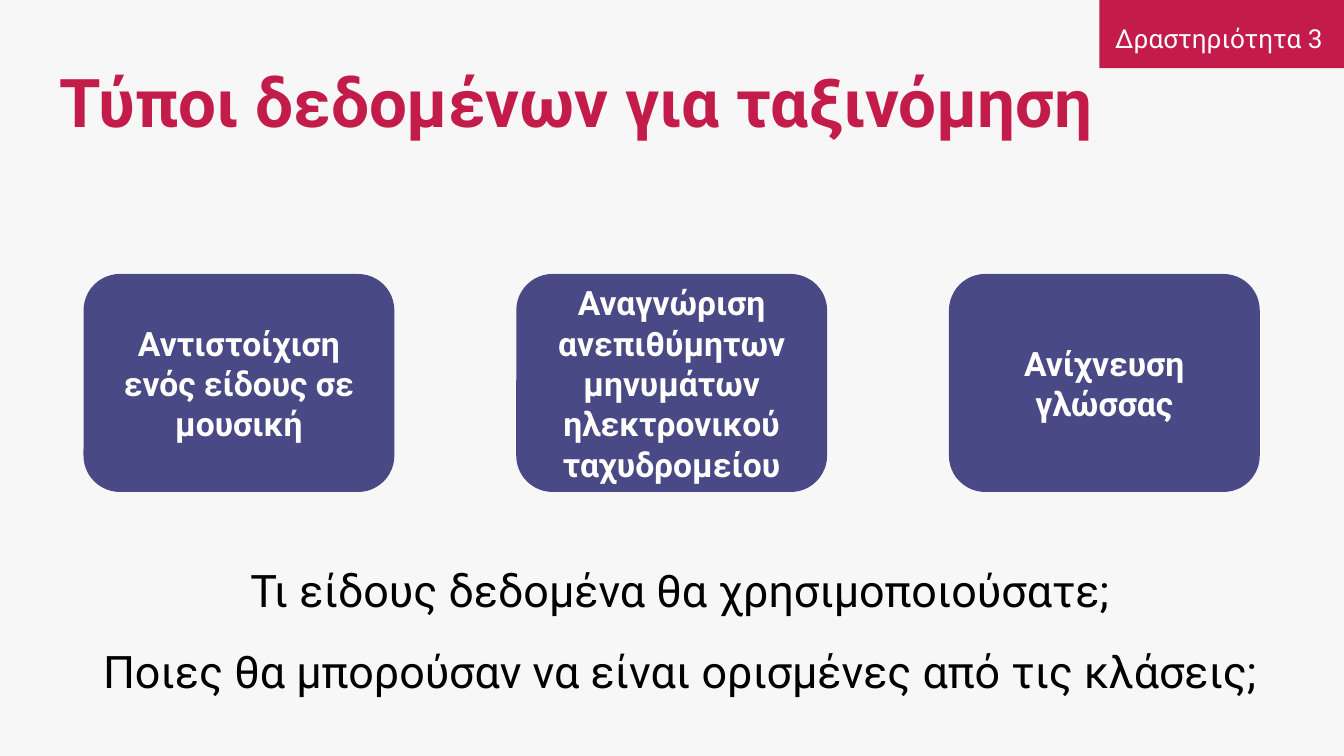
from dataclasses import dataclass

import pptx
import pptx.dml.color
import pptx.enum.shapes
import pptx.enum.text
import pptx.util

Pt = pptx.util.Pt
RGB = pptx.dml.color.RGBColor
Align = pptx.enum.text.PP_ALIGN
Anchor = pptx.enum.text.MSO_ANCHOR
Shape = pptx.enum.shapes.MSO_SHAPE


@dataclass(frozen=True)
class Theme:
    font: str = "Roboto"
    background: RGB = RGB(0xF7, 0xF7, 0xF7)
    accent: RGB = RGB(0xC3, 0x1C, 0x4A)
    card: RGB = RGB(0x49, 0x49, 0x85)
    light: RGB = RGB(0xFF, 0xFF, 0xFF)
    dark: RGB = RGB(0, 0, 0)
    title_size: int = 36
    question_size: int = 24
    card_size: int = 18
    tag_size: int = 14
    inset: float = 7.2


@dataclass(frozen=True)
class Box:
    left: float
    top: float
    width: float
    height: float

    def lengths(self) -> list:
        return [Pt(v) for v in (self.left, self.top, self.width, self.height)]


@dataclass(frozen=True)
class TextStyle:
    size: int
    color: RGB
    bold: bool = False
    align: Align = Align.CENTER
    anchor: Anchor = Anchor.TOP
    spacing: float = 1.0
    after: float = 0


THEME = Theme()


def move(sp, box: Box) -> None:
    sp.left, sp.top, sp.width, sp.height = box.lengths()


def write(sp, lines: list[str], style: TextStyle) -> None:
    tf = sp.text_frame
    tf.word_wrap = True
    tf.auto_size = pptx.enum.text.MSO_AUTO_SIZE.NONE
    tf.vertical_anchor = style.anchor
    tf.margin_left = tf.margin_right = Pt(THEME.inset)
    tf.margin_top = tf.margin_bottom = Pt(THEME.inset)
    for i, line in enumerate(lines):
        p = tf.add_paragraph() if i else tf.paragraphs[0]
        p.alignment = style.align
        p.line_spacing = style.spacing
        p.space_before = Pt(0)
        p.space_after = Pt(style.after)
        r = p.add_run()
        r.text = line
        r.font.name = THEME.font
        r.font.size = Pt(style.size)
        r.font.bold = style.bold
        r.font.color.rgb = style.color


def add_block(s, kind: Shape, box: Box, fill: RGB):
    sp = s.shapes.add_shape(kind, *box.lengths())
    sp.shadow.inherit = False
    sp.fill.solid()
    sp.fill.fore_color.rgb = fill
    sp.line.fill.background()
    return sp


def main() -> None:
    prs = pptx.Presentation()
    prs.slide_width, prs.slide_height = Pt(720), Pt(405)
    s = prs.slides.add_slide(prs.slide_layouts[0])
    s.background.fill.solid()
    s.background.fill.fore_color.rgb = THEME.background

    # Corner banner, sent behind the text
    banner = add_block(s, Shape.RECTANGLE, Box(589, 0, 131, 36.5), THEME.accent)
    s.shapes.title.element.addprevious(banner.element)

    # Title
    title = s.shapes.title
    move(title, Box(24.5, 25.2, 604.8, 55.4))
    write(title, ["Τύποι δεδομένων για ταξινόμηση"],
          TextStyle(THEME.title_size, THEME.accent, bold=True, align=Align.LEFT))

    # Activity label
    label = s.placeholders[1]
    move(label, Box(586.1, 2.2, 133.9, 30.2))
    write(label, ["Δραστηριότητα 3"],
          TextStyle(THEME.tag_size, THEME.light, spacing=1.15, after=16))

    # Row of example cards
    card_style = TextStyle(THEME.card_size, THEME.light, bold=True,
                           anchor=Anchor.MIDDLE)
    examples = [
        "Αντιστοίχιση ενός είδους σε μουσική",
        "Αναγνώριση ανεπιθύμητων μηνυμάτων ηλεκτρονικού ταχυδρομείου",
        "Ανίχνευση γλώσσας",
    ]
    for i, example in enumerate(examples):
        box = Box(44.8 + i * 231.8, 146.8, 166.5, 116.8)
        card = add_block(s, Shape.ROUNDED_RECTANGLE, box, THEME.card)
        write(card, [example], card_style)

    # Discussion questions
    questions = s.shapes.add_textbox(*Box(33.1, 280, 662.4, 87.1).lengths())
    write(questions,
          ["Τι είδους δεδομένα θα χρησιμοποιούσατε;",
           "Ποιες θα μπορούσαν να είναι ορισμένες από τις κλάσεις;"],
          TextStyle(THEME.question_size, THEME.dark, spacing=1.5))

    prs.save("out.pptx")


if __name__ == "__main__":
    main()
